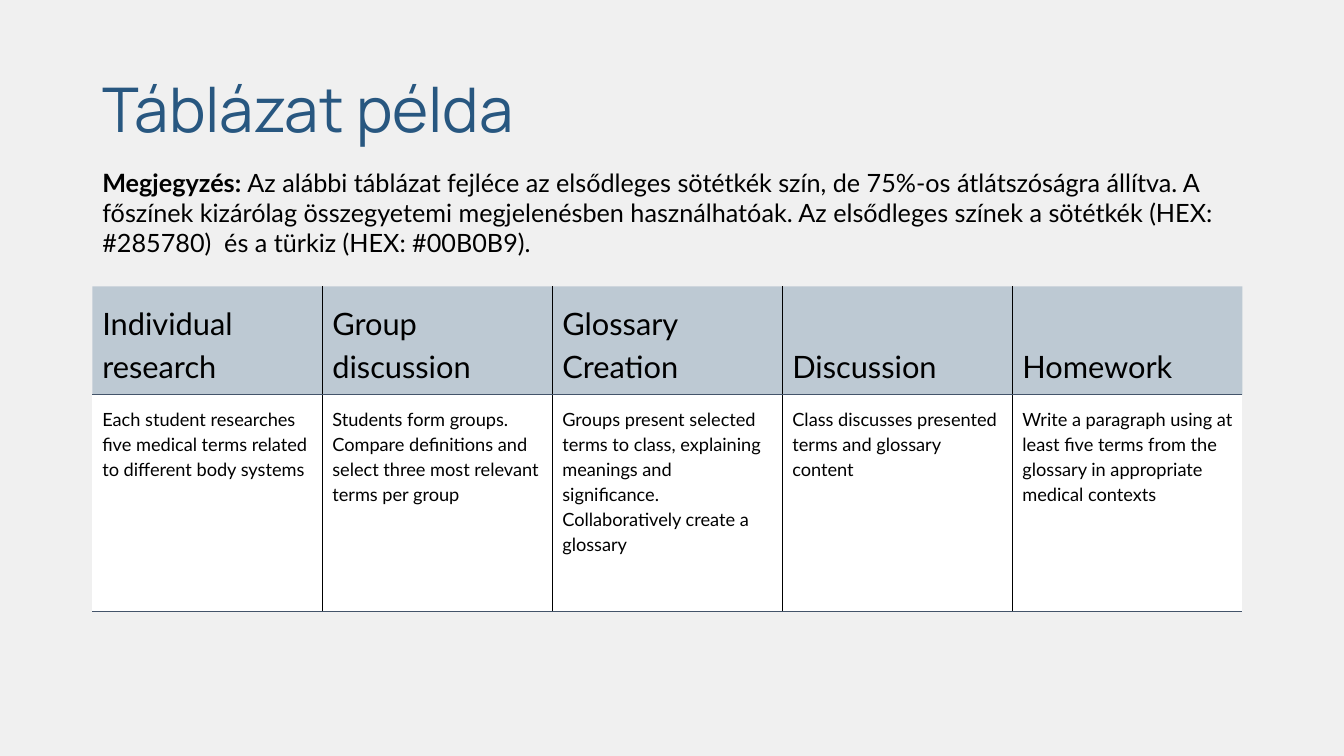
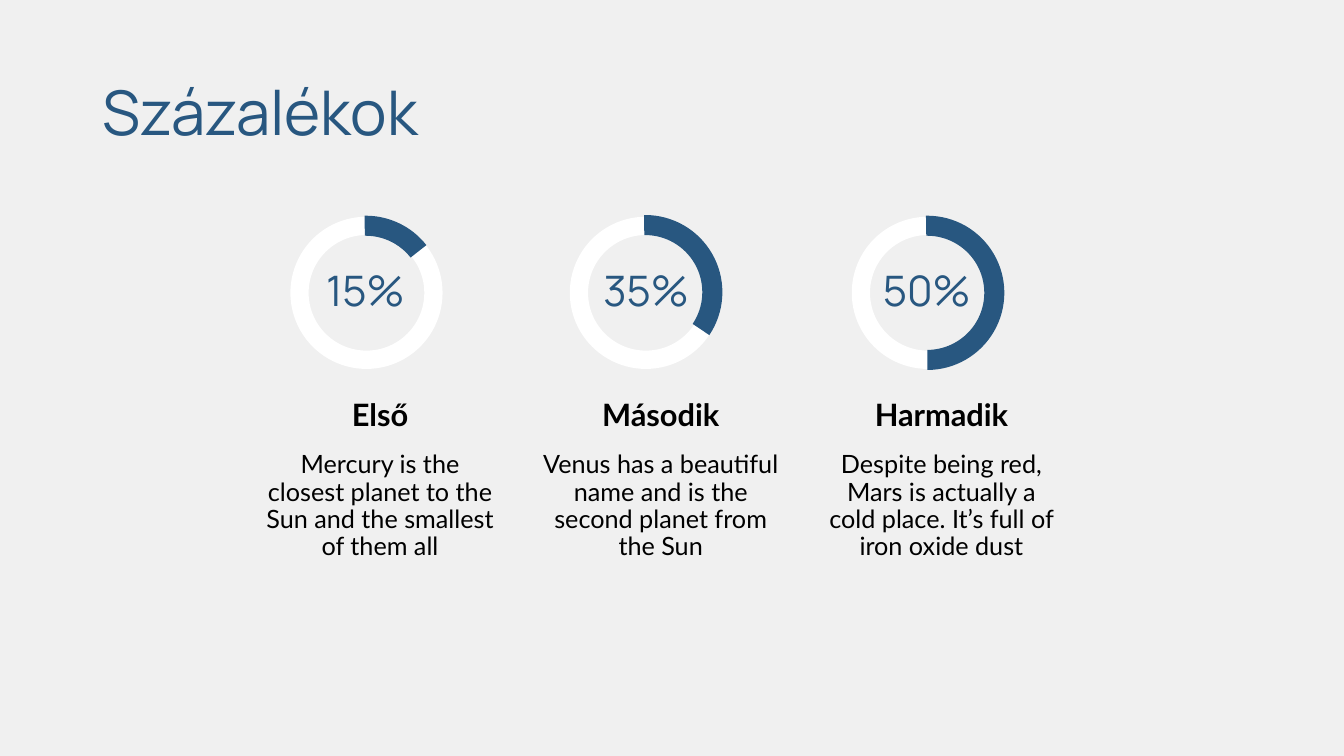
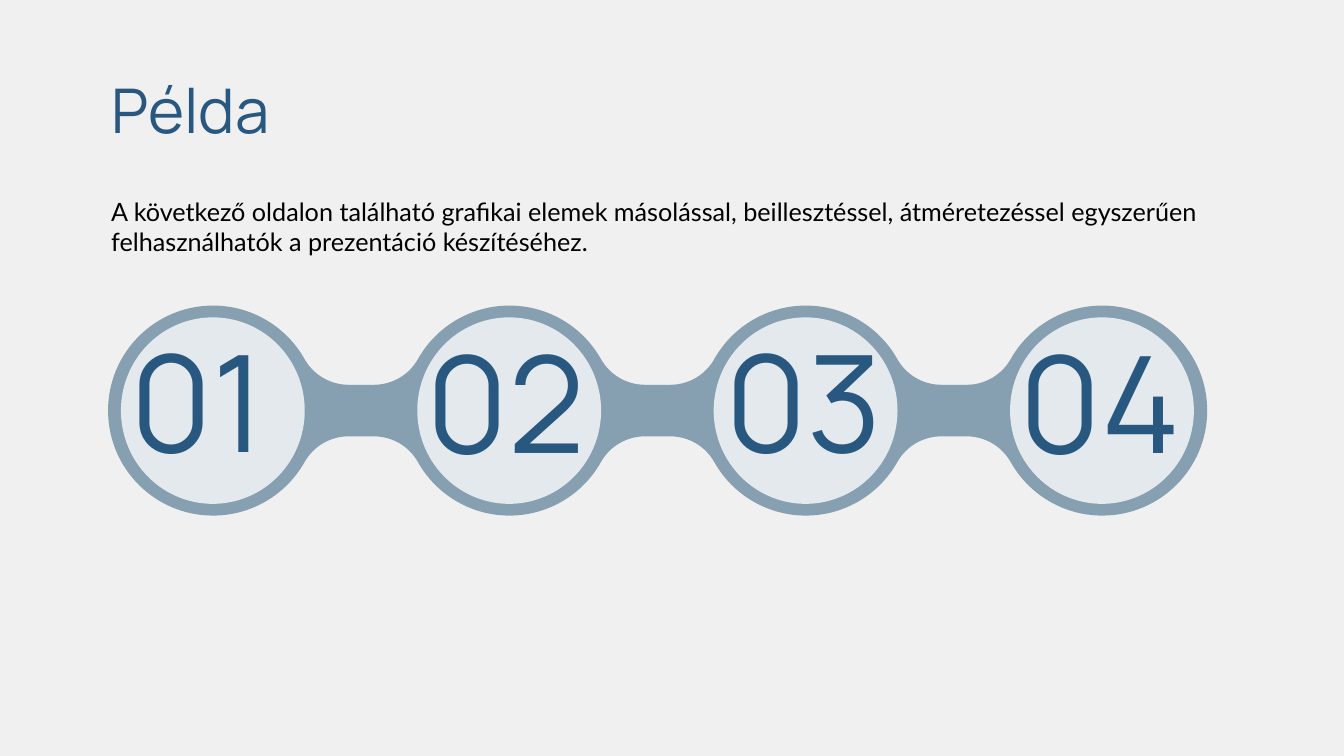
from math import atan2, cos, pi, sin, tan

from lxml import etree
from pptx import Presentation
from pptx.dml.color import RGBColor
from pptx.enum.shapes import MSO_SHAPE
from pptx.enum.text import MSO_ANCHOR, PP_ALIGN
from pptx.oxml.ns import qn
from pptx.util import Pt

OVAL, DONUT, ARC = MSO_SHAPE.OVAL, MSO_SHAPE.DONUT, MSO_SHAPE.BLOCK_ARC
TOP, MID, LOW = MSO_ANCHOR.TOP, MSO_ANCHOR.MIDDLE, MSO_ANCHOR.BOTTOM
LEFT, CENTER = PP_ALIGN.LEFT, PP_ALIGN.CENTER


class Theme:
    back, navy, black, white = "F0F0F0", "285780", "000000", "FFFFFF"
    rule, chain, disc = "44546A", "869FB1", "E3E9ED"
    inset = 7.2
    title = dict(name="Manrope", size=44, color=navy)
    body = dict(name="Lato", size=18, color=black)
    head = dict(body, size=22)
    bold = dict(body, bold=True)
    label = dict(head, bold=True)
    cell = dict(body, size=13)
    share = dict(title, size=30)
    digit = dict(title, size=96)


NOTE = [
    ("Megjegyzés: ", Theme.bold),
    ("Az alábbi táblázat fejléce az elsődleges sötétkék szín, de 75%-os átlátszóságra állítva. "
     "A főszínek kizárólag összegyetemi megjelenésben használhatóak. Az elsődleges színek a "
     "sötétkék (HEX: #285780)  és a türkiz (HEX: #00B0B9).", Theme.body),
]
TASKS = [
    ("Individual research",
     ["Each student researches five medical terms related to different body systems"]),
    ("Group discussion",
     ["Students form groups.",
      "Compare definitions and select three most relevant terms per group"]),
    ("Glossary Creation",
     ["Groups present selected terms to class, explaining meanings and significance.",
      "Collaboratively create a glossary"]),
    ("Discussion",
     ["Class discusses presented terms and glossary content"]),
    ("Homework",
     ["Write a paragraph using at least five terms from the glossary in appropriate medical contexts"]),
]
ROWS = [77.6, 33.2, 33.2, 88.2]
RINGS = [
    ("15%", 207.4, 154.1, 321.8, "Első",
     "Mercury is the closest planet to the Sun and the smallest of them all"),
    ("35%", 407, 153.6, 33.8, "Második",
     "Venus has a beautiful name and is the second planet from the Sun"),
    ("50%", 608.4, 154.1, 89.8, "Harmadik",
     "Despite being red, Mars is actually a cold place. It’s full of iron oxide dust"),
]
INTRO = ("A következő oldalon található grafikai elemek másolással, beillesztéssel, "
         "átméretezéssel egyszerűen felhasználhatók a prezentáció készítéséhez.")
STEPS = [("01", 86.4, 256.3), ("02", 297.5, 257.2), ("03", 511.2, 256.3), ("04", 721.3, 257.2)]


def paint(fill, color):
    fill.solid()
    fill.fore_color.rgb = RGBColor.from_string(color)


def style(font, look):
    for key, val in look.items():
        if key == "color":
            font.color.rgb = RGBColor.from_string(val)
        else:
            setattr(font, key, Pt(val) if key == "size" else val)


def write(frame, paras, space=1.0, align=LEFT):
    for i, runs in enumerate(paras):
        para = frame.paragraphs[0] if i == 0 else frame.add_paragraph()
        para.line_spacing, para.alignment = space, align
        for text, look in runs:
            run = para.add_run()
            run.text = text
            style(run.font, look)


def add_text(slide, box, runs, anchor=TOP, space=1.0, align=LEFT):
    frame = slide.shapes.add_textbox(*map(Pt, box)).text_frame
    frame.word_wrap, frame.vertical_anchor = True, anchor
    for side in ("left", "right", "top", "bottom"):
        setattr(frame, "margin_" + side, Pt(Theme.inset))
    write(frame, [runs], space, align)


def finish(shape, color):
    shape.shadow.inherit = False
    paint(shape.fill, color)
    shape.line.fill.background()


def add_form(slide, kind, box, color, adjust=()):
    shape = slide.shapes.add_shape(kind, *map(Pt, box))
    finish(shape, color)
    for i, val in enumerate(adjust):
        shape.adjustments[i] = val


def new_slide(deck, title, left, top):
    slide = deck.slides.add_slide(deck.slide_layouts[6])
    paint(slide.background.fill, Theme.back)
    add_text(slide, (left, top, 828, 104.4), [(title, Theme.title)], MID, 0.9)
    return slide


def border(cell, edges):
    props = cell._tc.get_or_add_tcPr()
    for side in "LRTB":
        if side in edges:
            line = etree.SubElement(props, qn("a:ln" + side), w=str(Pt(0.75)))
            fill = etree.SubElement(line, qn("a:solidFill"))
            etree.SubElement(fill, qn("a:srgbClr"), val=edges[side])


def fill_cell(cell, paras, look, anchor, color):
    for side in ("left", "right", "top", "bottom"):
        setattr(cell, "margin_" + side, Pt(Theme.inset))
    cell.vertical_anchor = anchor
    write(cell.text_frame, [[(text, look)] for text in paras], 1.15)
    paint(cell.fill, color)


def add_tasks(slide):
    box = map(Pt, (65.9, 204.5, 821.5, sum(ROWS)))
    table = slide.shapes.add_table(len(ROWS), len(TASKS), *box).table
    table.horz_banding = table.first_row = False
    table._tbl.tblPr.find(qn("a:tableStyleId")).text = "{2D5ABB26-0587-4C30-8999-92F81FD0307C}"
    for row, high in zip(table.rows, ROWS):
        row.height = Pt(high)
    last = len(ROWS) - 1
    for c, (head, paras) in enumerate(TASKS):
        table.columns[c].width = Pt(164.3)
        sides = {}
        if c > 0:
            sides["L"] = Theme.black
        if c < len(TASKS) - 1:
            sides["R"] = Theme.black
        table.cell(1, c).merge(table.cell(last, c))
        for r in range(len(ROWS)):
            edges = dict(sides)
            if r == 1:
                edges["T"] = Theme.rule
            if r in (0, 1, last):
                edges["B"] = Theme.rule
            border(table.cell(r, c), edges)
        top = table.cell(0, c)
        fill_cell(top, [head], Theme.head, LOW, Theme.navy)
        tint = top._tc.tcPr.find(qn("a:solidFill"))[0]
        etree.SubElement(tint, qn("a:alpha"), val="25000")
        fill_cell(table.cell(1, c), paras, Theme.cell, TOP, Theme.white)
        for r in range(2, len(ROWS)):
            paint(table.cell(r, c).fill, Theme.white)


def add_rings(slide):
    for i, (share, left, top, end, name, fact) in enumerate(RINGS):
        x = 180 + 200.5 * i
        add_form(slide, DONUT, (left, 154.8, 108.7, 108.7), Theme.white, [0.12])
        add_form(slide, ARC, (left - 1.2, top, 110.2, 110.2), Theme.navy,
                 [269.1 * 0.6, end * 0.6, 0.13])
        add_text(slide, (x + 34, 193.3, 94, 31.7), [(share, Theme.share)], MID, 0.9, CENTER)
        add_text(slide, (x, 276.5, 183, 39.6), [(name, Theme.label)], LOW, 1.0, CENTER)
        add_text(slide, (x, 315.7, 183, 140), [(fact, Theme.body)], TOP, 0.9, CENTER)


def bend(x, y, size, start, end):
    pull = 4 / 3 * tan((end - start) / 4)
    (c1, s1), (c2, s2) = [(cos(turn), sin(turn)) for turn in (start, end)]
    spots = [(c1 - pull * s1, s1 + pull * c1), (c2 + pull * s2, s2 - pull * c2), (c2, s2)]
    return [(x + size * dx, y + size * dy) for dx, dy in spots]


def add_curves(slide, dots, color):
    dots = [(Pt(x), Pt(y)) for x, y in dots]
    pen = slide.shapes.build_freeform(*dots[0])
    pen.add_line_segments(dots[1:], close=True)
    shape = pen.convert_to_shape()
    finish(shape, color)
    lines = list(shape._element.iter(qn("a:lnTo")))
    for i in range(0, len(lines) - 2, 3):
        curve = etree.Element(qn("a:cubicBezTo"))
        lines[i].addprevious(curve)
        for line in lines[i:i + 3]:
            curve.append(line[0])
            line.getparent().remove(line)


def add_chain(slide):
    left, mid, step, size = 152.2, 293.3, 211.7, 75
    reach, half = 96.8, 18.4
    curve = (reach ** 2 + half ** 2 - size ** 2) / (2 * (size - half))
    tilt = atan2(half + curve, reach)
    last = len(STEPS) - 1
    edge = [(left - size, 0)]
    for i in range(len(STEPS)):
        x = left + step * i
        if i > 0:
            edge += [edge[-1]] + [(x - reach, half)] * 2
            edge += bend(x - reach, half + curve, curve, 1.5 * pi, 2 * pi - tilt)
        edge += bend(x, 0, size, pi - tilt if i else pi, pi / 2)
        edge += bend(x, 0, size, pi / 2, tilt if i < last else 0)
        if i < last:
            edge += bend(x + reach, half + curve, curve, pi + tilt, 1.5 * pi)
    ring = [(x, mid - y) for x, y in edge] + [(x, mid + y) for x, y in edge[-2::-1]]
    add_curves(slide, ring, Theme.chain)
    for i in range(len(STEPS)):
        add_form(slide, OVAL, (left - 65.8 + step * i, mid - 66.6, 131.3, 133.2), Theme.disc)
    for text, x, y in STEPS:
        add_text(slide, (x, y, 144.7, 72), [(text, Theme.digit)], MID, 0.9)


def main():
    deck = Presentation()
    deck.slide_width, deck.slide_height = Pt(960), Pt(540)

    slide = new_slide(deck, "Táblázat példa", 66.2, 28)
    add_text(slide, (66, 112.3, 821.5, 77), NOTE)
    add_tasks(slide)

    slide = new_slide(deck, "Százalékok", 66.2, 30.2)
    add_rings(slide)

    slide = new_slide(deck, "Példa", 72.4, 28.8)
    add_chain(slide)
    add_text(slide, (72.3, 132.9, 841, 72.7), [(INTRO, Theme.body)])

    deck.save("out.pptx")


if __name__ == "__main__":
    main()
